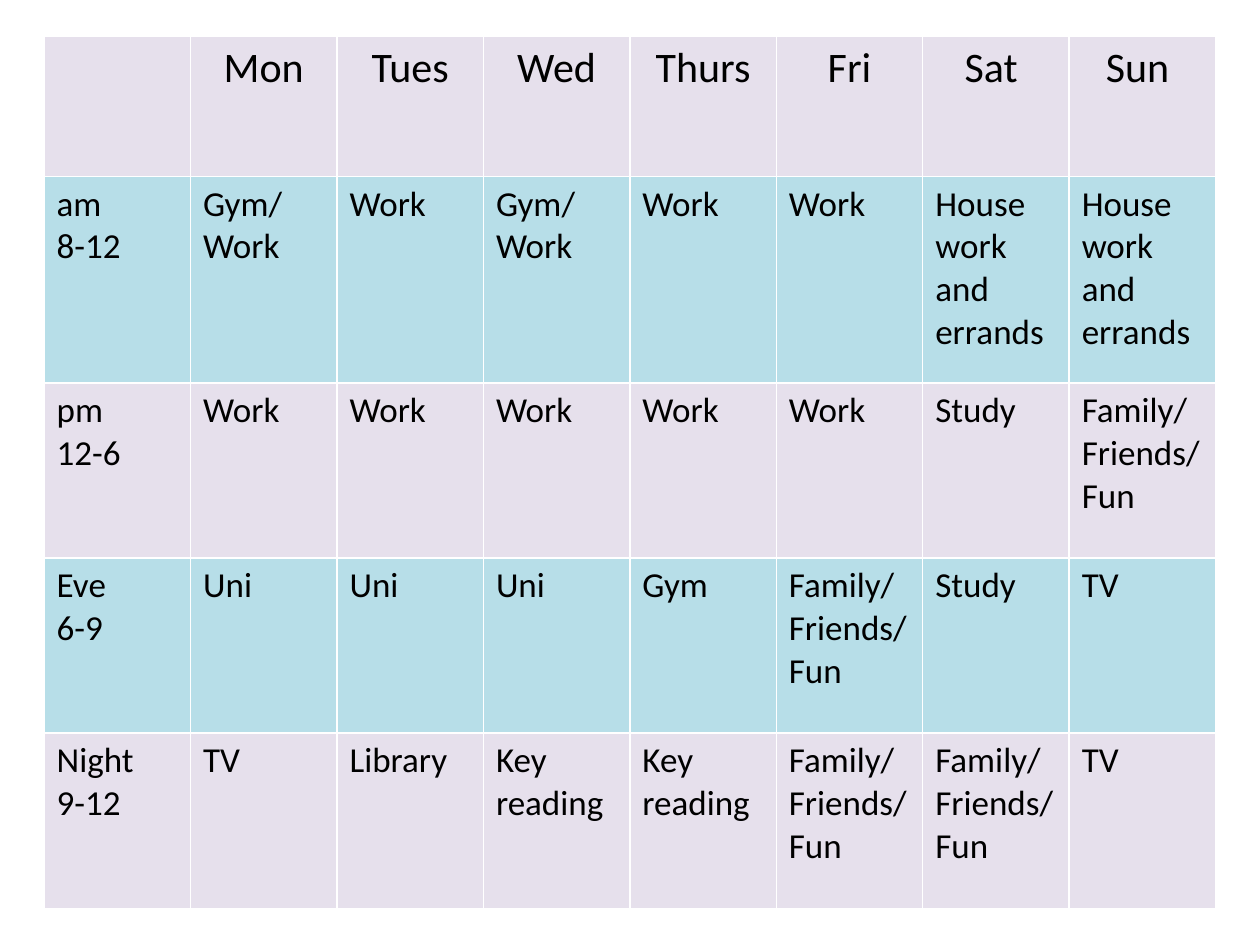
from lxml import etree
from pptx import Presentation
from pptx.dml.color import RGBColor
from pptx.enum.text import PP_ALIGN
from pptx.oxml.ns import qn
from pptx.util import Inches, Pt

CENTER, LEFT = PP_ALIGN.CENTER, PP_ALIGN.LEFT
BLANK_LAYOUT = 6
FONT = "Calibri"
COLORS = {"lilac": "E6E0EC", "aqua": "B7DEE8", "text": "000000", "border": "FFFFFF"}

FUN = "Family/\nFriends/Fun"
ERRANDS = "House work and errands"
GYM_WORK = "Gym/\nWork"
SCHEDULE = [
    ["", "Mon", "Tues", "Wed", "Thurs", "Fri", "Sat ", "Sun "],
    ["am\n8-12", GYM_WORK, "Work", GYM_WORK, "Work", "Work", ERRANDS, ERRANDS],
    ["pm\n12-6", "Work", "Work", "Work", "Work", "Work", "Study", FUN],
    ["Eve\n6-9", "Uni", "Uni", "Uni", "Gym", FUN, "Study", "TV"],
    ["Night\n9-12", "TV", "Library", "Key reading", "Key reading", FUN, FUN, "TV"],
]
ROW_HEIGHTS = [1.11, 1.64, 1.39, 1.39, 1.39]


def set_borders(cell):
    """Draw thin white lines on all four sides of a cell."""
    properties = cell._tc.get_or_add_tcPr()
    for side in ("L", "R", "T", "B"):
        line = etree.SubElement(properties, qn(f"a:ln{side}"), w=str(Pt(1)))
        fill = etree.SubElement(line, qn("a:solidFill"))
        etree.SubElement(fill, qn("a:srgbClr"), val=COLORS["border"])


def format_cell(cell, text, is_header, fill_color):
    set_borders(cell)
    cell.fill.solid()
    cell.fill.fore_color.rgb = RGBColor.from_string(fill_color)
    cell.text_frame.text = text
    for paragraph in cell.text_frame.paragraphs:
        paragraph.alignment = CENTER if is_header else LEFT
        for run in paragraph.runs:
            run.font.name = FONT
            run.font.size = Pt(24 if is_header else 20)
            run.font.bold = False
            run.font.color.rgb = RGBColor.from_string(COLORS["text"])


def add_timetable(slide, left, top, width, height):
    """Place the weekly timetable in the given box."""
    column_count = len(SCHEDULE[0])
    table = slide.shapes.add_table(
        len(SCHEDULE), column_count, left, top, width, height
    ).table
    for column in table.columns:
        column.width = int(width / column_count)
    for row_index, texts in enumerate(SCHEDULE):
        table.rows[row_index].height = int(
            height * ROW_HEIGHTS[row_index] / sum(ROW_HEIGHTS)
        )
        # Rows alternate between the two fills
        fill_color = COLORS["aqua" if row_index % 2 else "lilac"]
        for column_index, text in enumerate(texts):
            cell = table.cell(row_index, column_index)
            format_cell(cell, text, row_index == 0, fill_color)


def main():
    presentation = Presentation()
    presentation.slide_width = Inches(10)
    presentation.slide_height = Inches(7.5)
    slide = presentation.slides.add_slide(presentation.slide_layouts[BLANK_LAYOUT])
    add_timetable(slide, Inches(0.35), Inches(0.29), Inches(9.3), Inches(6.92))
    presentation.save("out.pptx")


if __name__ == "__main__":
    main()
